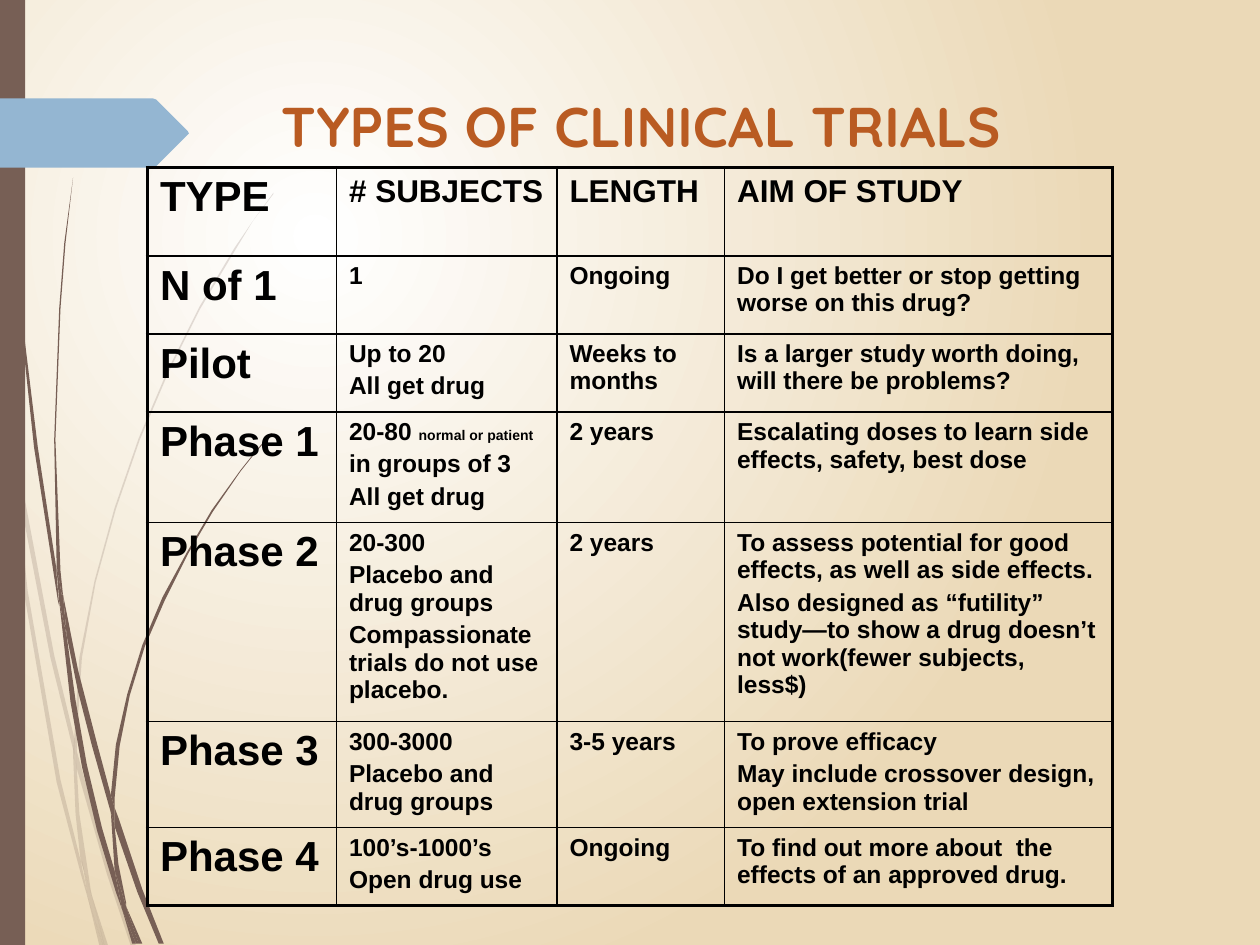
from dataclasses import dataclass

from lxml import etree
from pptx import Presentation
from pptx.dml.color import RGBColor
from pptx.enum.shapes import MSO_SHAPE
from pptx.oxml.ns import qn
from pptx.util import Inches, Pt

RECTANGLE = MSO_SHAPE.RECTANGLE


@dataclass(frozen=True)
class Theme:
    brown: str = "775F55"
    blue: str = "94B6D2"
    title: str = "B95B22"
    ink: str = "000000"
    glow: str = "FFFFFF"
    sand: str = "EBD9B7"
    title_font: str = "Quicksand"
    body_font: str = "Arial"
    title_size: int = 32
    type_size: int = 24
    header_size: int = 18
    body_size: int = 14
    note_size: int = 8
    outer_line: float = 2.25
    inner_line: float = 1


@dataclass(frozen=True)
class Trial:
    name: str
    subjects: tuple
    length: str
    aim: tuple
    note: str = ""


THEME = Theme()
HEADER = ("TYPE", "# SUBJECTS", "LENGTH", "AIM OF STUDY")
COLUMN_WIDTHS = (1.5, 1.75, 1.33, 3.08)
HEADER_HEIGHT, ROW_HEIGHT = 0.7, 0.62
TRIALS = (
    Trial("N of 1", ("1",), "Ongoing", ("Do I get better or stop getting worse on this drug?",)),
    Trial("Pilot", ("Up to 20", "All get drug"), "Weeks to months",
          ("Is a larger study worth doing, will there be problems?",)),
    Trial("Phase 1", ("20-80 ", "in groups of 3", "All get drug"), "2 years",
          ("Escalating doses to learn side effects, safety, best dose",), "normal or patient"),
    Trial("Phase 2", ("20-300", "Placebo and drug groups",
                      "Compassionate trials do not use placebo."), "2 years",
          ("To assess potential for good effects, as well as side effects.",
           "Also designed as “futility” study—to show a drug doesn’t not work(fewer subjects, less$)")),
    Trial("Phase 3", ("300-3000", "Placebo and drug groups"), "3-5 years",
          ("To prove efficacy", "May include crossover design, open extension trial")),
    Trial("Phase 4", ("100’s-1000’s", "Open drug use"), "Ongoing",
          ("To find out more about  the effects of an approved drug.",)),
)

# Outlines are in hundredths of an inch.
UNIT = Inches(0.01)
PALE_STEMS = (
    ((8, 350), (6, 322), (0, 282), (0, 299), (7, 344)),
    ((40, 522), (59, 599), (59, 586), (43, 520), (10, 345), (12, 376)),
    ((64, 607), (61, 596), (61, 610), (85, 694), (104, 751), (108, 751), (88, 692)),
    ((83, 751), (86, 751), (73, 711)),
    ((64, 683), (48, 619), (22, 469), (12, 376), (8, 350), (19, 470), (45, 621), (64, 693),
     (70, 714), (69, 707)),
    ((58, 599), (60, 646), (64, 683), (67, 692), (73, 711), (72, 706), (63, 646), (61, 610),
     (61, 608)),
    ((61, 584), (65, 522), (76, 462), (92, 404), (111, 349), (134, 295), (159, 245), (187, 198),
     (201, 175), (217, 154), (217, 153), (201, 175), (186, 197), (158, 244), (133, 294),
     (110, 348), (91, 403), (75, 461), (63, 522), (59, 584), (59, 586), (61, 596)),
    ((70, 714), (79, 751), (82, 751)),
    ((61, 608), (61, 610), (61, 596), (59, 586), (58, 599)),
    ((67, 692), (65, 683), (69, 707), (70, 714), (82, 751), (83, 751), (73, 711)),
)
DARK_STEMS = (
    ((5, 110), (14, 233), (27, 355), (46, 477), (47, 481), (45, 457), (45, 453), (30, 355),
     (15, 232), (6, 109), (4, 48), (3, 0), (2, 0), (3, 48)),
    ((73, 592), (88, 645), (88, 633), (88, 631), (77, 590), (62, 532), (50, 472), (53, 505),
     (62, 549)),
    ((94, 649), (91, 641), (91, 656), (109, 708), (126, 749), (130, 749), (113, 706)),
    ((91, 691), (81, 657), (69, 607), (60, 556), (53, 505), (47, 477), (56, 557), (65, 608),
     (77, 659), (92, 708), (97, 722), (96, 717)),
    ((50, 472), (48, 453), (44, 349), (48, 245), (52, 193), (58, 141), (51, 193), (47, 245),
     (43, 349), (45, 449), (49, 472)),
    ((110, 749), (113, 749), (100, 719)),
    ((47, 477), (53, 505), (50, 472), (49, 472), (45, 449), (45, 453)),
    ((91, 633), (95, 592), (103, 552), (115, 513), (131, 476), (149, 440), (169, 406), (191, 374),
     (203, 359), (216, 344), (215, 344), (203, 358), (191, 373), (168, 405), (148, 439),
     (129, 474), (113, 512), (101, 551), (92, 591), (88, 631), (91, 641)),
    ((97, 722), (105, 749), (108, 749)),
    ((88, 645), (91, 691), (96, 706), (100, 719), (100, 716), (94, 686), (91, 656), (90, 651)),
    ((88, 645), (90, 651), (91, 656), (91, 641), (88, 631), (88, 633)),
    ((96, 706), (91, 691), (96, 717), (97, 722), (108, 749), (110, 749), (100, 719)),
)
TITLE_TAG = ((149, 107), (124, 132), (121, 133), (0, 133), (0, 78), (121, 78), (124, 79),
             (149, 104), (150, 105.5))


def paint(shape, color: str) -> None:
    shape.shadow.inherit = False
    shape.fill.solid()
    shape.fill.fore_color.rgb = RGBColor.from_string(color)
    shape.line.fill.background()


def draw_outline(shapes, points: tuple, color: str):
    builder = shapes.build_freeform(*points[0], scale=UNIT)
    builder.add_line_segments(points[1:], close=True)
    outline = builder.convert_to_shape()
    paint(outline, color)
    return outline


def draw_stems(slide, stems: tuple, opacity: int = 100) -> None:
    group = slide.shapes.add_group_shape()
    for points in stems:
        stem = draw_outline(group.shapes, points, THEME.brown)
        if opacity < 100:
            color = next(stem._element.iter(qn("a:srgbClr")))
            etree.SubElement(color, qn("a:alpha"), val=str(opacity * 1000))


def add_text(para, text: str, *, size: int, font: str = THEME.body_font,
             color: str = THEME.ink) -> None:
    span = para.add_run()
    span.text = text
    span.font.size = Pt(size)
    span.font.name = font
    span.font.bold = True
    span.font.color.rgb = RGBColor.from_string(color)


def set_background(slide) -> None:
    """Radial glow centred in the upper left part of the page."""
    fill = slide.background.fill
    fill.gradient()
    for stop, color, position in zip(fill.gradient_stops, (THEME.glow, THEME.sand), (0, 1)):
        stop.color.rgb = RGBColor.from_string(color)
        stop.position = position
    linear = next(slide._element.iter(qn("a:lin")))
    radial = etree.Element(qn("a:path"), {"path": "circle"})
    etree.SubElement(radial, qn("a:fillToRect"), l="50000", t="50000", r="100000", b="100000")
    linear.getparent().replace(linear, radial)


def set_borders(cell, outer_edges: dict) -> None:
    properties = cell._tc.get_or_add_tcPr()
    for side, is_outer in outer_edges.items():
        width = THEME.outer_line if is_outer else THEME.inner_line
        line = etree.SubElement(properties, qn(f"a:ln{side}"), w=str(Pt(width)))
        fill = etree.SubElement(line, qn("a:solidFill"))
        etree.SubElement(fill, qn("a:srgbClr"), val=THEME.ink)


def fill_cell(cell, lines: tuple, size: int, note: str = "") -> None:
    frame = cell.text_frame
    for index, text in enumerate(lines):
        para = frame.add_paragraph() if index else frame.paragraphs[0]
        spacing = etree.SubElement(para._p.get_or_add_pPr(), qn("a:spcBef"))
        etree.SubElement(spacing, qn("a:spcPct"), val="20000")
        add_text(para, text, size=size)
        if note and index == 0:
            add_text(para, note, size=THEME.note_size)


def draw_trials(slide) -> None:
    row_count, column_count = len(TRIALS) + 1, len(HEADER)
    table = slide.shapes.add_table(
        row_count, column_count, Inches(1.17), Inches(1.33), Inches(sum(COLUMN_WIDTHS)),
        Inches(HEADER_HEIGHT + ROW_HEIGHT * len(TRIALS))).table
    table.first_row = table.horz_banding = False
    for column, width in zip(table.columns, COLUMN_WIDTHS):
        column.width = Inches(width)
    rows = [tuple((label,) for label in HEADER)]
    rows += [((trial.name,), trial.subjects, (trial.length,), trial.aim) for trial in TRIALS]
    for r, row in enumerate(rows):
        table.rows[r].height = Inches(ROW_HEIGHT if r else HEADER_HEIGHT)
        for c, lines in enumerate(row):
            cell = table.cell(r, c)
            size = THEME.body_size if r else THEME.header_size
            note = TRIALS[r - 1].note if r and c == 1 else ""
            fill_cell(cell, lines, size if c else THEME.type_size, note)
            set_borders(cell, {"L": c == 0, "R": c == column_count - 1,
                               "T": r == 0, "B": r == row_count - 1})
            cell.fill.background()


def main() -> None:
    deck = Presentation()
    deck.slide_width, deck.slide_height = Inches(10), Inches(7.5)
    slide = deck.slides.add_slide(deck.slide_layouts[6])
    set_background(slide)
    draw_stems(slide, PALE_STEMS, opacity=20)
    draw_stems(slide, DARK_STEMS)
    side_bar = slide.shapes.add_shape(RECTANGLE, 0, 0, Inches(0.2), deck.slide_height)
    paint(side_bar, THEME.brown)
    draw_outline(slide.shapes, TITLE_TAG, THEME.blue)
    title = slide.shapes.add_textbox(Inches(2.13), Inches(0.68), Inches(7.21), Inches(1.4))
    title.text_frame.word_wrap = True
    add_text(title.text_frame.paragraphs[0], "TYPES OF CLINICAL TRIALS", size=THEME.title_size,
             font=THEME.title_font, color=THEME.title)
    draw_trials(slide)
    deck.save("out.pptx")


if __name__ == "__main__":
    main()
